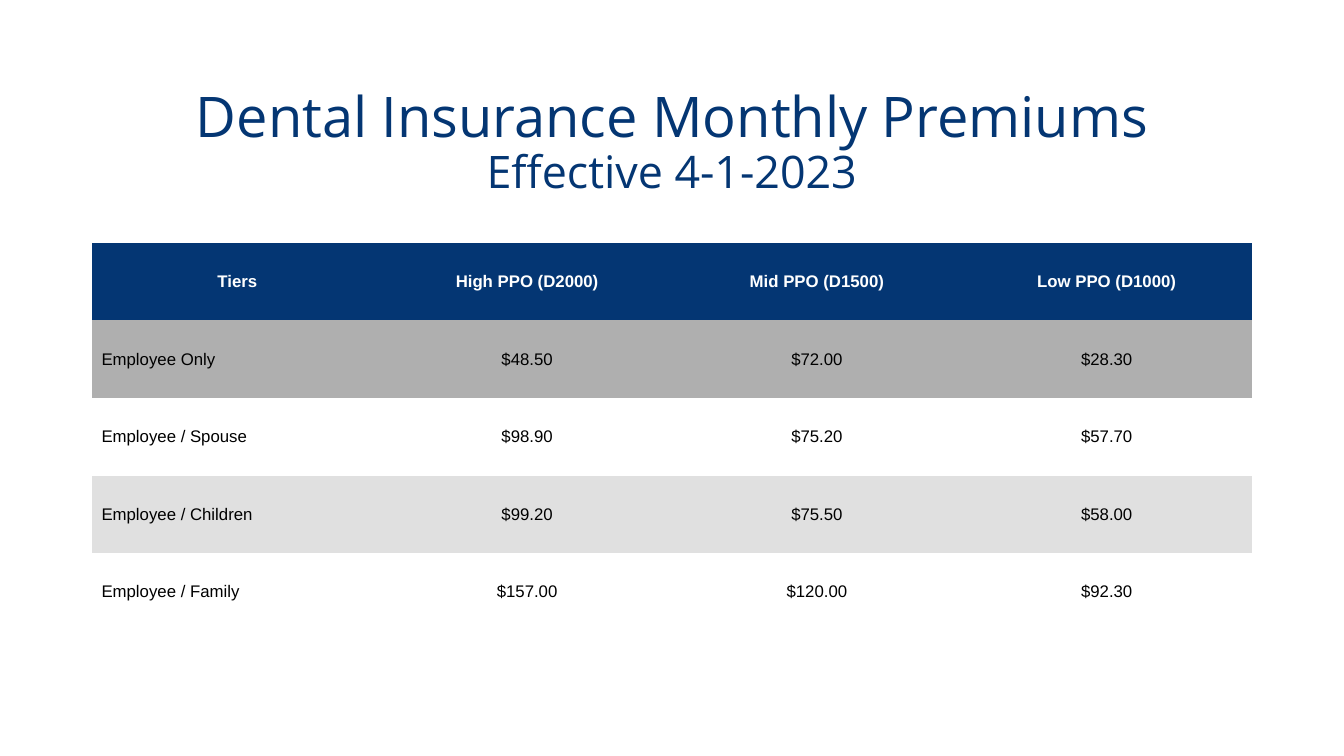
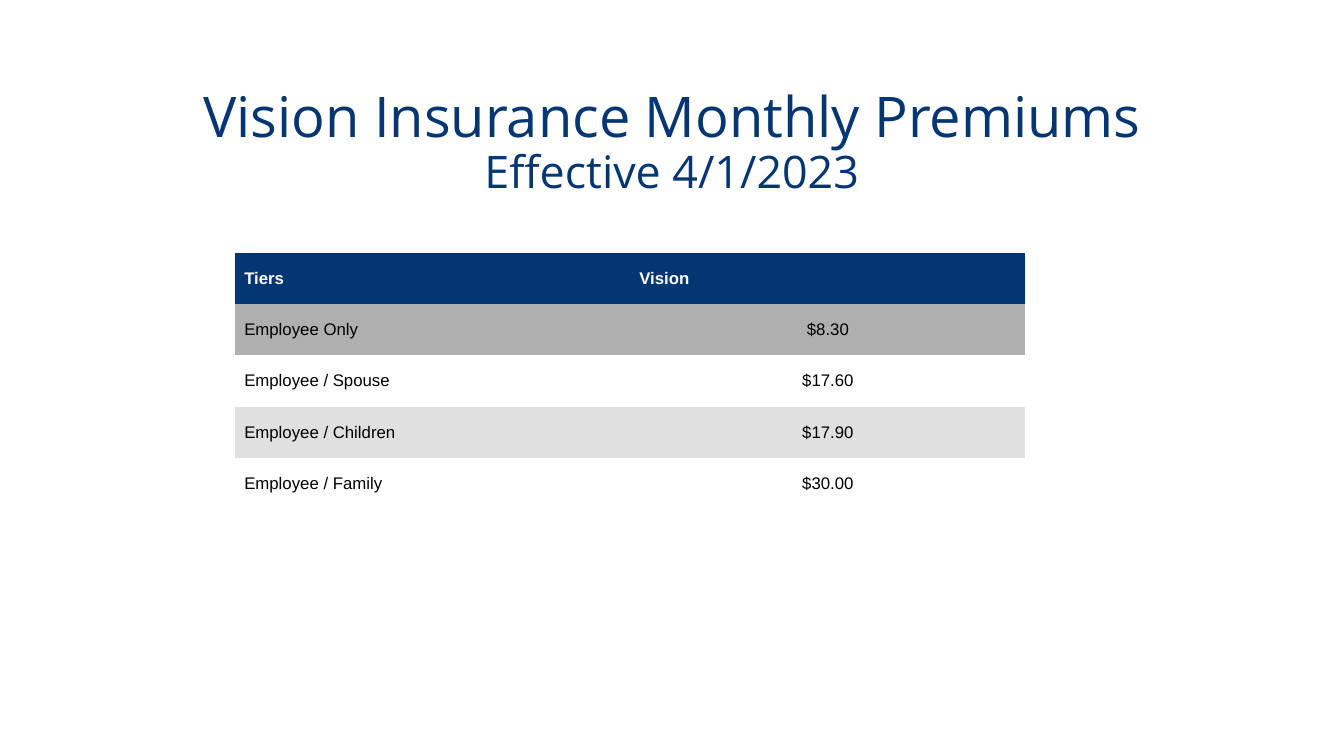
from lxml.etree import SubElement
from pptx import Presentation
from pptx.dml.color import RGBColor as RGB
from pptx.enum.text import MSO_ANCHOR as Anchor, MSO_AUTO_SIZE as Fit, PP_ALIGN as Align
from pptx.oxml.ns import qn
from pptx.util import Inches, Pt

COLORS = {"navy": "043673", "white": "FFFFFF", "black": "000000",
          "gray": "AFAFAF", "light": "E0E0E0"}
FILLS = ["navy", "gray", "white", "light", "white"]
NO_STYLE = "{2D5ABB26-0587-4C30-8999-92F81FD0307C}"
TITLE_BOX = (6.88, 9.33, 86.25, 19.33)
TIERS = ["Employee Only", "Employee / Spouse", "Employee / Children", "Employee / Family"]


class Deck:
    """Holds the shared style and the current slide; boxes are percentages of the slide."""

    def __init__(self):
        self.prs = Presentation()
        self.prs.slide_width, self.prs.slide_height = Inches(13.333), Inches(7.5)
        self.s = None

    def box(self, shares):
        size = (self.prs.slide_width, self.prs.slide_height) * 2
        return [round(total * share / 100) for total, share in zip(size, shares)]

    def add_text(self, p, text, color, **font):
        r = p.add_run()
        r.text = text
        for name, value in font.items():
            setattr(r.font, name, value)
        r.font.color.rgb = RGB.from_string(COLORS[color])

    def title(self, heading, date):
        self.s = self.prs.slides.add_slide(self.prs.slide_layouts[5])
        sp = self.s.shapes.title
        for name, value in zip(("left", "top", "width", "height"), self.box(TITLE_BOX)):
            setattr(sp, name, value)
        tf = sp.text_frame
        for name, value in {"word_wrap": True, "auto_size": Fit.NONE,
                            "vertical_anchor": Anchor.MIDDLE}.items():
            setattr(tf, name, value)
        p = tf.paragraphs[0]
        p.alignment, p.line_spacing = Align.CENTER, 0.9
        self.add_text(p, heading, "navy", name="Open Sans", size=Pt(40))
        # The break keeps the size of the heading line
        p.add_line_break()
        SubElement(p._p[-1], qn("a:rPr"), sz="4000")
        self.add_text(p, date, "navy", name="Open Sans", size=Pt(32))

    def table(self, shares, rows, header_align):
        x, y, w, h = self.box(shares)
        n_rows, n_cols = len(rows), len(rows[0])
        tbl = self.s.shapes.add_table(n_rows, n_cols, x, y, w, h).table
        tbl.horz_banding = False
        tbl._tbl.tblPr.find(qn("a:tableStyleId")).text = NO_STYLE
        for i, row in enumerate(rows):
            for j, text in enumerate(row):
                align = header_align if i == 0 else Align.CENTER if j else Align.LEFT
                self.cell(tbl.cell(i, j), text, FILLS[i], align, header=i == 0)

    def cell(self, cell, text, fill, align, header):
        for name, value in {"vertical_anchor": Anchor.MIDDLE,
                            "margin_left": Inches(0.09), "margin_right": Inches(0.09),
                            "margin_top": Inches(0.04), "margin_bottom": Inches(0.04)}.items():
            setattr(cell, name, value)
        cell.fill.solid()
        cell.fill.fore_color.rgb = RGB.from_string(COLORS[fill])
        p = cell.text_frame.paragraphs[0]
        p.alignment = align
        self.add_text(p, text, "white" if header else "black",
                      name="Arial", size=Pt(12), bold=header)


def main():
    deck = Deck()

    # Dental premiums
    deck.title("Dental Insurance Monthly Premiums", "Effective 4-1-2023")
    high = ["$48.50", "$98.90", "$99.20", "$157.00"]
    mid = ["$72.00", "$75.20", "$75.50", "$120.00"]
    low = ["$28.30", "$57.70", "$58.00", "$92.30"]
    header = ("Tiers", "High PPO (D2000)", "Mid PPO (D1500)", "Low PPO (D1000)")
    deck.table((6.88, 32.13, 86.25, 51.33), [header, *zip(TIERS, high, mid, low)], Align.CENTER)

    # Vision premiums
    deck.title("Vision Insurance Monthly Premiums", "Effective 4/1/2023")
    vision = ["$8.30", "$17.60", "$17.90", "$30.00"]
    deck.table((17.5, 33.47, 58.8, 33.87), [("Tiers", "Vision"), *zip(TIERS, vision)], Align.LEFT)

    deck.prs.save("out.pptx")


if __name__ == "__main__":
    main()
